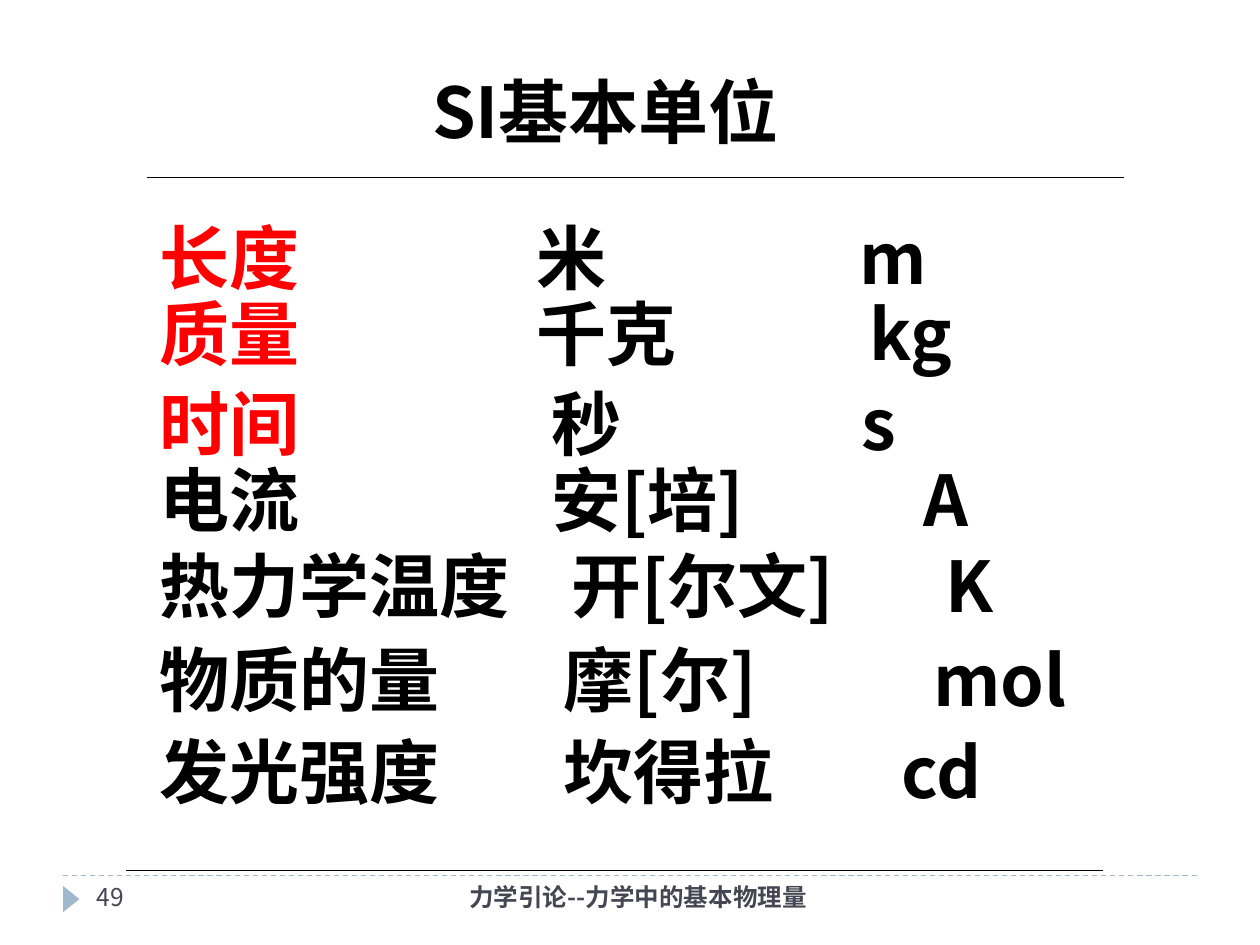
from dataclasses import dataclass
from typing import Optional

from lxml.etree import SubElement
from pptx import Presentation
from pptx.dml.color import RGBColor
from pptx.enum.dml import MSO_LINE_DASH_STYLE as Dash
from pptx.enum.shapes import MSO_CONNECTOR as Connector, MSO_SHAPE as Preset
from pptx.enum.text import MSO_ANCHOR as Anchor, MSO_AUTO_SIZE as AutoSize, PP_ALIGN as Align
from pptx.oxml.ns import qn
from pptx.util import Cm, Pt

FONT = "Noto Sans CJK JP"
BLACK = RGBColor(0x00, 0x00, 0x00)
RED = RGBColor(0xFF, 0x00, 0x00)
SLATE = RGBColor(0x46, 0x46, 0x53)
STEEL = RGBColor(0x9F, 0xB8, 0xCD)


@dataclass
class Unit:
    quantity: str
    name: str
    symbol: str
    name_tab: float
    symbol_tab: float
    pitch: Optional[float] = None
    color: RGBColor = BLACK


@dataclass
class Rule:
    left: float
    right: float
    y: float
    color: RGBColor = BLACK
    dash: Optional[Dash] = None


UNITS = [
    Unit("长度", "米", "m", 7.6, 14.1, color=RED),
    Unit("质量", "千克", "kg", 7.6, 14.3, 43.5, RED),
    Unit("时间", "秒", "s", 7.9, 14.15, 51.5, RED),
    Unit("电流", "安[培]", "A", 7.9, 15.4, 43.5),
    Unit("热力学温度", "开[尔文]", "K", 8.3, 15.85, 49),
    Unit("物质的量", "摩[尔]", "mol", 8.15, 15.6, 53.5),
    Unit("发光强度", "坎得拉", "cd", 8.15, 14.95, 52.5),
]
RULES = [
    Rule(1.27, 24.13, 17.65, STEEL, Dash.DASH),
    Rule(2.97, 22.66, 3.58),
    Rule(2.54, 22.23, 17.55),
]


def style_span(span, size: float, color: RGBColor, bold: bool) -> None:
    span.font.name = FONT
    span.font.size = Pt(size)
    span.font.bold = bold
    span.font.color.rgb = color
    SubElement(span.font._element, qn("a:ea")).set("typeface", FONT)


def place(box, left: float, top: float, width: float, height: float) -> None:
    box.left, box.top, box.width, box.height = Cm(left), Cm(top), Cm(width), Cm(height)
    frame = box.text_frame
    frame.word_wrap = True
    frame.auto_size = AutoSize.NONE
    frame.vertical_anchor = Anchor.TOP


def write_line(box, text: str, size: float, color: RGBColor, bold: bool, align: Align) -> None:
    box.text_frame.text = text
    para = box.text_frame.paragraphs[0]
    para.alignment = align
    style_span(para.runs[0], size, color, bold)


def write_unit(para, unit: Unit) -> None:
    for text, color in ((unit.quantity, unit.color), (f"\t{unit.name}\t{unit.symbol}", BLACK)):
        span = para.add_run()
        span.text = text
        style_span(span, 40, color, True)
    para.space_before = para.space_after = Pt(0)
    para.line_spacing = Pt(unit.pitch) if unit.pitch else 1.0
    tabs = SubElement(para._p.get_or_add_pPr(), qn("a:tabLst"))
    for position in (unit.name_tab, unit.symbol_tab):
        tab = SubElement(tabs, qn("a:tab"))
        tab.set("pos", str(int(Cm(position))))
        tab.set("algn", "l")


def draw_rule(page, rule: Rule) -> None:
    line = page.shapes.add_connector(
        Connector.STRAIGHT, Cm(rule.left), Cm(rule.y), Cm(rule.right), Cm(rule.y))
    line.line.color.rgb = rule.color
    line.line.width = Pt(0.75)
    if rule.dash:
        line.line.dash_style = rule.dash
    SubElement(line._element.spPr, qn("a:effectLst"))


def draw_marker(page) -> None:
    marker = page.shapes.add_shape(
        Preset.ISOSCELES_TRIANGLE, Cm(1.17), Cm(17.96), Cm(0.53), Cm(0.33))
    marker.rotation = 90
    marker.shadow.inherit = False
    marker.fill.solid()
    marker.fill.fore_color.rgb = STEEL
    marker.line.fill.background()


def draw_footer(page, text: str, left: float, width: float, bold: bool, align: Align) -> None:
    box = page.shapes.add_textbox(0, 0, 0, 0)
    place(box, left, 17.65, width, 1.02)
    write_line(box, text, 14, SLATE, bold, align)


def main() -> None:
    deck = Presentation()
    deck.slide_width, deck.slide_height = Cm(25.4), Cm(19.05)
    page = deck.slides.add_slide(deck.slide_layouts[5])

    title = page.shapes.title
    place(title, 8.46, 1.26, 8.05, 1.96)
    write_line(title, "SI基本单位", 40, BLACK, True, Align.LEFT)

    units_box = page.shapes.add_textbox(0, 0, 0, 0)
    place(units_box, 2.97, 4.2, 19.84, 13.13)
    frame = units_box.text_frame
    for index, unit in enumerate(UNITS):
        write_unit(frame.add_paragraph() if index else frame.paragraphs[0], unit)

    for rule in RULES:
        draw_rule(page, rule)
    draw_marker(page)
    draw_footer(page, "49", 1.7, 5.51, False, Align.LEFT)
    draw_footer(page, "力学引论--力学中的基本物理量", 8.0, 9.73, True, Align.CENTER)
    deck.save("out.pptx")


if __name__ == "__main__":
    main()
